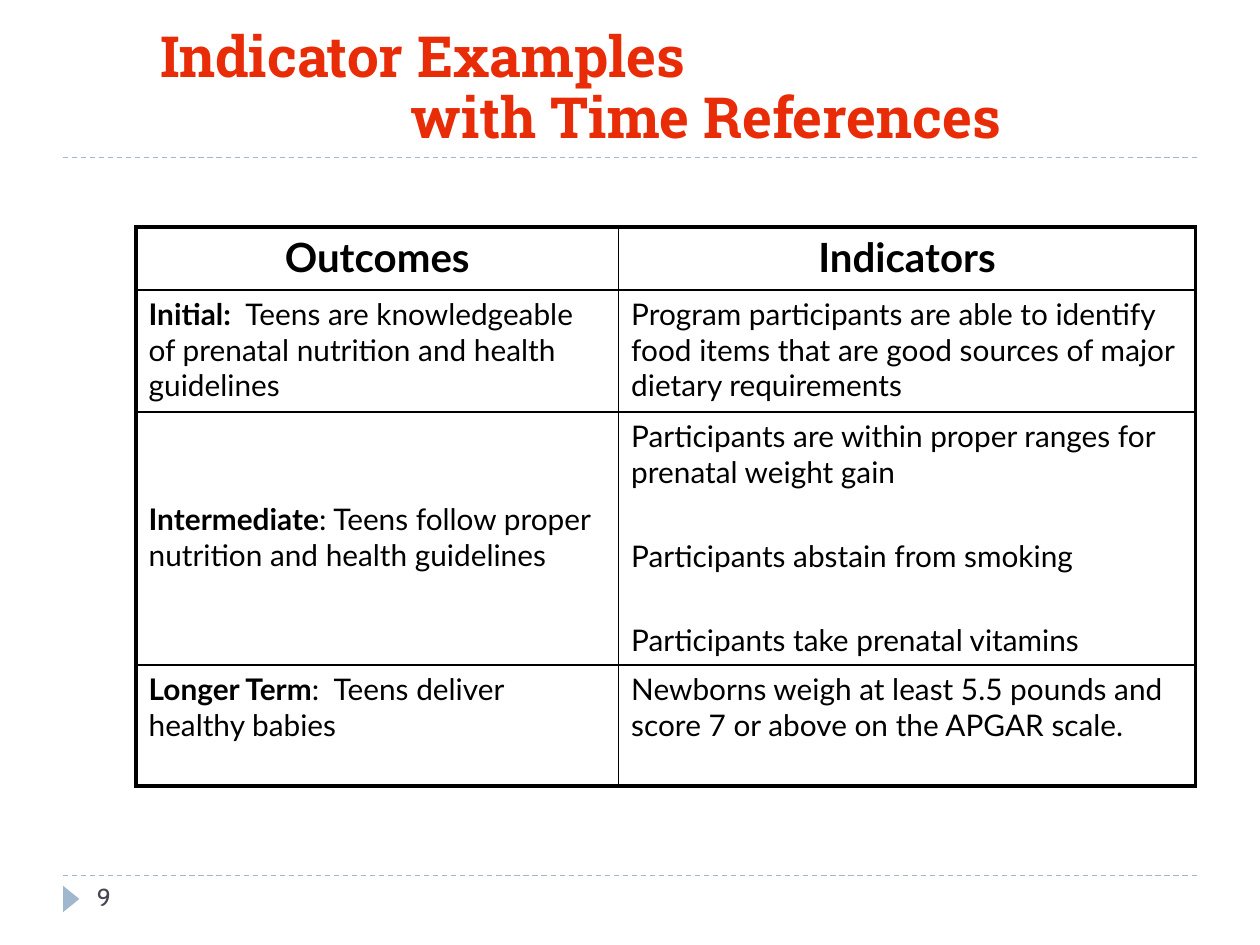
from lxml import etree
from pptx import Presentation
from pptx.dml.color import RGBColor
from pptx.enum.dml import MSO_LINE
from pptx.enum.shapes import MSO_CONNECTOR, MSO_SHAPE
from pptx.enum.text import MSO_ANCHOR, PP_ALIGN
from pptx.oxml.ns import qn
from pptx.util import Inches, Pt

COLORS = {"title": "E82C08", "accent": "9FB8CD", "number": "464653", "text": "000000"}
THICK, THIN = 2.25, 1

COLUMN_WIDTHS = [3.83, 4.58]
ROW_HEIGHTS = [0.5, 0.97, 2.01, 0.96]
HEADERS = ["Outcomes", "Indicators"]
# Each row: bold term, rest of the outcome, top margin of the outcome, indicators
ROWS = [
    ("Initial:", "  Teens are knowledgeable of prenatal nutrition and health guidelines", 0.05,
     ["Program participants are able to identify food items that are good sources "
      "of major dietary requirements"]),
    ("Intermediate", ": Teens follow proper nutrition and health guidelines", 0.71,
     ["Participants are within proper ranges for prenatal weight gain",
      "Participants abstain from smoking",
      "Participants take prenatal vitamins"]),
    ("Longer Term", ":  Teens deliver healthy babies", 0.05,
     ["Newborns weigh at least 5.5 pounds and score 7 or above on the APGAR scale."]),
]


class SlideBuilder:
    title_font, body_font, number_font = "Roboto Slab", "Lato", "Cabin"

    def __init__(self, presentation):
        self.slide = presentation.slides.add_slide(presentation.slide_layouts[5])

    def color(self, name):
        return RGBColor.from_string(COLORS[name])

    def style(self, paragraph, font_name, size, color, bold=False):
        font = paragraph.font
        font.name, font.size, font.bold = font_name, Pt(size), bold
        font.color.rgb = self.color(color)

    def dashed_line(self, y):
        line = self.slide.shapes.add_connector(
            MSO_CONNECTOR.STRAIGHT, Inches(0.5), Inches(y), Inches(9.5), Inches(y))
        line.line.color.rgb = self.color("accent")
        line.line.width = Pt(0.75)
        line.line.dash_style = MSO_LINE.DASH
        etree.SubElement(line._element.spPr, qn("a:effectLst"))

    def triangle(self, left, top, width, height):
        shape = self.slide.shapes.add_shape(
            MSO_SHAPE.ISOSCELES_TRIANGLE,
            Inches(left), Inches(top), Inches(width), Inches(height))
        shape.rotation = 90
        shape.shadow.inherit = False
        shape.fill.solid()
        shape.fill.fore_color.rgb = self.color("accent")
        shape.line.fill.background()

    def page_number(self, text, left, top, width, height):
        box = self.slide.shapes.add_textbox(
            Inches(left), Inches(top), Inches(width), Inches(height))
        box.text_frame.word_wrap = True
        paragraph = box.text_frame.paragraphs[0]
        paragraph.text = text
        self.style(paragraph, self.number_font, 14, "number")

    def title(self, lines, indent, left, top, width, height):
        title = self.slide.shapes.title
        title.left, title.top = Inches(left), Inches(top)
        title.width, title.height = Inches(width), Inches(height)
        frame = title.text_frame
        frame.vertical_anchor = MSO_ANCHOR.BOTTOM
        frame.text = "\n".join(lines)
        for index, paragraph in enumerate(frame.paragraphs):
            paragraph.alignment = PP_ALIGN.LEFT
            paragraph.line_spacing = 0.9
            self.style(paragraph, self.title_font, 32.4, "title", True)
            paragraph._p.get_or_add_pPr().set("marL", str(Inches(indent * index)))

    def table(self, left, top):
        frame = self.slide.shapes.add_table(
            len(ROW_HEIGHTS), len(COLUMN_WIDTHS), Inches(left), Inches(top),
            Inches(sum(COLUMN_WIDTHS)), Inches(sum(ROW_HEIGHTS)))
        table = frame.table
        table.first_row = table.horz_banding = False
        for column, width in zip(table.columns, COLUMN_WIDTHS):
            column.width = Inches(width)
        for row, height in zip(table.rows, ROW_HEIGHTS):
            row.height = Inches(height)
        last_row, last_column = len(ROW_HEIGHTS) - 1, len(COLUMN_WIDTHS) - 1
        for r in range(last_row + 1):
            for c in range(last_column + 1):
                cell = table.cell(r, c)
                outer_sides = {"lnL": c == 0, "lnR": c == last_column,
                               "lnT": r == 0, "lnB": r == last_row}
                self.borders(cell, outer_sides)
                cell.fill.background()
        return table

    def borders(self, cell, outer_sides):
        properties = cell._tc.get_or_add_tcPr()
        for side, outer in outer_sides.items():
            width = Pt(THICK if outer else THIN)
            line = etree.SubElement(properties, qn(f"a:{side}"), w=str(width))
            fill = etree.SubElement(line, qn("a:solidFill"))
            etree.SubElement(fill, qn("a:srgbClr"), val=COLORS["text"])

    def header_cell(self, cell, text):
        cell.text = text
        paragraph = cell.text_frame.paragraphs[0]
        paragraph.alignment = PP_ALIGN.CENTER
        self.style(paragraph, self.body_font, 23, "text", True)

    def outcome_cell(self, cell, term, description, margin_top):
        cell.margin_top = Inches(margin_top)
        paragraph = cell.text_frame.paragraphs[0]
        self.style(paragraph, self.body_font, 17, "text")
        for text, bold in ((term, True), (description, False)):
            run = paragraph.add_run()
            run.text = text
            run.font.bold = bold

    def indicator_cell(self, cell, indicators):
        cell.text = "\n".join(indicators)
        for index, paragraph in enumerate(cell.text_frame.paragraphs):
            self.style(paragraph, self.body_font, 17, "text")
            paragraph.space_before = Pt(27.5 if index else 0)


def main():
    presentation = Presentation()
    presentation.slide_width, presentation.slide_height = Inches(10), Inches(7.5)
    builder = SlideBuilder(presentation)

    # Rules and footer
    for y in (6.95, 1.25):
        builder.dashed_line(y)
    builder.triangle(0.46, 7.07, 0.21, 0.13)
    builder.page_number("9", 0.67, 6.95, 2.17, 0.4)

    # Title, second line indented
    builder.title(["Indicator Examples", "with Time References"], 1.99, 1.17, 0, 8, 1.25)

    # Outcomes and indicators
    table = builder.table(1.08, 1.8)
    for column, header in enumerate(HEADERS):
        builder.header_cell(table.cell(0, column), header)
    for row, (term, description, margin_top, indicators) in enumerate(ROWS, start=1):
        builder.outcome_cell(table.cell(row, 0), term, description, margin_top)
        builder.indicator_cell(table.cell(row, 1), indicators)

    presentation.save("out.pptx")


if __name__ == "__main__":
    main()
